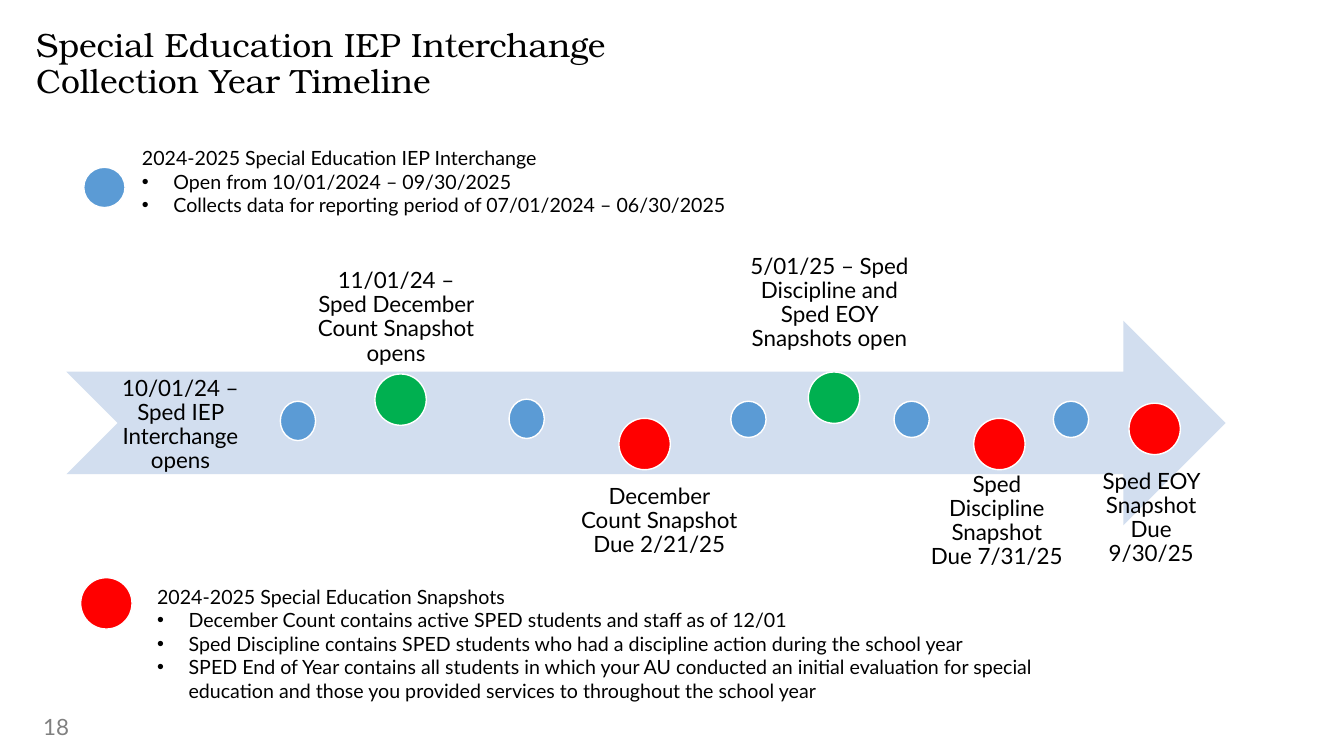
"""Build the Special Education IEP Interchange collection year timeline slide."""
from dataclasses import dataclass

import pptx
import pptx.dml.color
import pptx.enum.shapes
import pptx.enum.text
import pptx.oxml
import pptx.oxml.ns
import pptx.shapes.autoshape
import pptx.slide
import pptx.text.text
import pptx.util

Pt = pptx.util.Pt
SHAPE = pptx.enum.shapes.MSO_SHAPE
ANCHOR = pptx.enum.text.MSO_ANCHOR
ALIGN = pptx.enum.text.PP_ALIGN

COLORS = {
    "text": "000000",
    "number": "808080",
    "arrow": "D2DEEF",
    "outline": "FFFFFF",
    "interchange": "5B9BD5",
    "opens": "00B050",
    "due": "FF0000",
}
BODY_FONT = "Lato"
TITLE_FONT = "TeX Gyre Bonum"
MILESTONE_SIZE = 36.7
BULLET_INDENT = 22.5


@dataclass(frozen=True)
class Box:
    left: float
    top: float
    width: float
    height: float


@dataclass(frozen=True)
class Marker:
    color: str
    box: Box


@dataclass(frozen=True)
class Label:
    text: str
    box: Box
    anchor: ANCHOR


@dataclass(frozen=True)
class Legend:
    heading: str
    bullets: tuple[str, ...]
    box: Box


def milestone(color: str, left: float, top: float) -> Marker:
    """Return a large round marker."""
    return Marker(color, Box(left, top, MILESTONE_SIZE, MILESTONE_SIZE))


def interval(left: float, top: float, height: float) -> Marker:
    """Return a small marker for the open interchange."""
    return Marker("interchange", Box(left, top, 25.2, height))


LABELS = (
    Label("10/01/24 – Sped IEP Interchange opens", Box(74.2, 272.9, 109.4, 74.2), ANCHOR.BOTTOM),
    Label("December Count Snapshot Due 2/21/25", Box(403.2, 337.7, 135.4, 146.2), ANCHOR.TOP),
    Label("11/01/24 – Sped December Count Snapshot opens", Box(216, 179.3, 133.9, 90.7), ANCHOR.BOTTOM),
    Label("5/01/25 – Sped Discipline and Sped EOY Snapshots open", Box(527, 173.5, 131, 90.7), ANCHOR.TOP),
    Label("Sped Discipline Snapshot Due 7/31/25", Box(655.9, 357.1, 112.3, 58.3), ANCHOR.BOTTOM),
    Label("Sped EOY Snapshot Due 9/30/25", Box(769, 326.9, 106.6, 123.8), ANCHOR.TOP),
)
MARKERS = (
    Marker("interchange", Box(59.8, 119.5, 29.5, 28.8)),
    milestone("due", 57.6, 412.6),
    milestone("opens", 267.8, 267.1),
    milestone("due", 442.1, 298.8),
    milestone("opens", 577.4, 265.7),
    milestone("due", 695.5, 298.8),
    milestone("due", 806.4, 288),
    interval(200.2, 286.6, 28.1),
    interval(363.6, 285.1, 28.1),
    interval(522, 286.6, 25.9),
    interval(638.6, 286.6, 25.9),
    interval(752.4, 286.6, 25.9),
)
LEGENDS = (
    Legend(
        "2024-2025 Special Education IEP Interchange",
        (
            "Open from 10/01/2024 – 09/30/2025",
            "Collects data for reporting period of 07/01/2024 – 06/30/2025",
        ),
        Box(94.3, 100.8, 501.8, 58.3),
    ),
    Legend(
        "2024-2025 Special Education Snapshots",
        (
            "December Count contains active SPED students and staff as of 12/01",
            "Sped Discipline contains SPED students who had a discipline action during the school year",
            "SPED End of Year contains all students in which your AU conducted an initial evaluation "
            "for special education and those you provided services to throughout the school year",
        ),
        Box(105.1, 414, 647.3, 92.2),
    ),
)


def rgb(color: str) -> pptx.dml.color.RGBColor:
    """Look up a named colour."""
    return pptx.dml.color.RGBColor.from_string(COLORS[color])


def add_figure(slide: pptx.slide.Slide, kind: SHAPE, box: Box, color: str) -> pptx.shapes.autoshape.Shape:
    """Draw a filled preset shape without shadow or outline."""
    figure = slide.shapes.add_shape(kind, Pt(box.left), Pt(box.top), Pt(box.width), Pt(box.height))
    figure.shadow.inherit = False
    figure.fill.solid()
    figure.fill.fore_color.rgb = rgb(color)
    figure.line.fill.background()
    return figure


def add_marker(slide: pptx.slide.Slide, marker: Marker) -> None:
    """Draw a round marker with a thin outline."""
    circle = add_figure(slide, SHAPE.OVAL, marker.box, marker.color)
    circle.line.color.rgb = rgb("outline")
    circle.line.width = Pt(1)


def add_frame(slide: pptx.slide.Slide, box: Box, inset: float | None = None) -> pptx.text.text.TextFrame:
    """Add a wrapping text box, with one inset on all sides if given."""
    frame = slide.shapes.add_textbox(Pt(box.left), Pt(box.top), Pt(box.width), Pt(box.height)).text_frame
    frame.word_wrap = True
    if inset is not None:
        frame.margin_left = frame.margin_right = Pt(inset)
        frame.margin_top = frame.margin_bottom = Pt(inset)
    return frame


def add_run(paragraph: pptx.text.text._Paragraph, text: str, size: float,
            font: str = BODY_FONT, color: str = "text") -> None:
    """Append a formatted run."""
    run = paragraph.add_run()
    run.text = text
    run.font.size = Pt(size)
    run.font.name = font
    run.font.color.rgb = rgb(color)


def add_title(slide: pptx.slide.Slide) -> None:
    """Write the two-line title."""
    paragraph = add_frame(slide, Box(25.9, 20.2, 638.6, 59.8), 0).paragraphs[0]
    paragraph.line_spacing = 0.9
    add_run(paragraph, "Special Education IEP Interchange", 24, TITLE_FONT)
    paragraph.add_line_break()
    add_run(paragraph, "Collection Year Timeline", 24, TITLE_FONT)


def add_label(slide: pptx.slide.Slide, label: Label) -> None:
    """Write a centred milestone label."""
    frame = add_frame(slide, label.box, 8.64)
    frame.vertical_anchor = label.anchor
    paragraph = frame.paragraphs[0]
    paragraph.alignment = ALIGN.CENTER
    paragraph.line_spacing = 0.9
    add_run(paragraph, label.text, 16)


def add_legend(slide: pptx.slide.Slide, legend: Legend) -> None:
    """Write a heading followed by bullets."""
    frame = add_frame(slide, legend.box)
    add_run(frame.paragraphs[0], legend.heading, 14)
    for text in legend.bullets:
        paragraph = frame.add_paragraph()
        properties = paragraph._p.get_or_add_pPr()
        properties.set("marL", str(Pt(BULLET_INDENT)))
        properties.set("indent", str(-Pt(BULLET_INDENT)))
        namespace = pptx.oxml.ns.nsdecls("a")
        properties.append(pptx.oxml.parse_xml(f'<a:buFont {namespace} typeface="Arial"/>'))
        properties.append(pptx.oxml.parse_xml(f'<a:buChar {namespace} char="•"/>'))
        add_run(paragraph, text, 14)


def main() -> None:
    """Build and save the slide."""
    deck = pptx.Presentation()
    deck.slide_width, deck.slide_height = Pt(960), Pt(540)
    slide = deck.slides.add_slide(deck.slide_layouts[6])
    add_title(slide)
    add_figure(slide, SHAPE.NOTCHED_RIGHT_ARROW, Box(47.5, 229, 828, 146.2), "arrow")
    for label in LABELS:
        add_label(slide, label)
    for marker in MARKERS:
        add_marker(slide, marker)
    for legend in LEGENDS:
        add_legend(slide, legend)
    page_number = add_frame(slide, Box(23.8, 506.2, 216, 28.8))
    add_run(page_number.paragraphs[0], "18", 16, color="number")
    deck.save("out.pptx")


if __name__ == "__main__":
    main()
